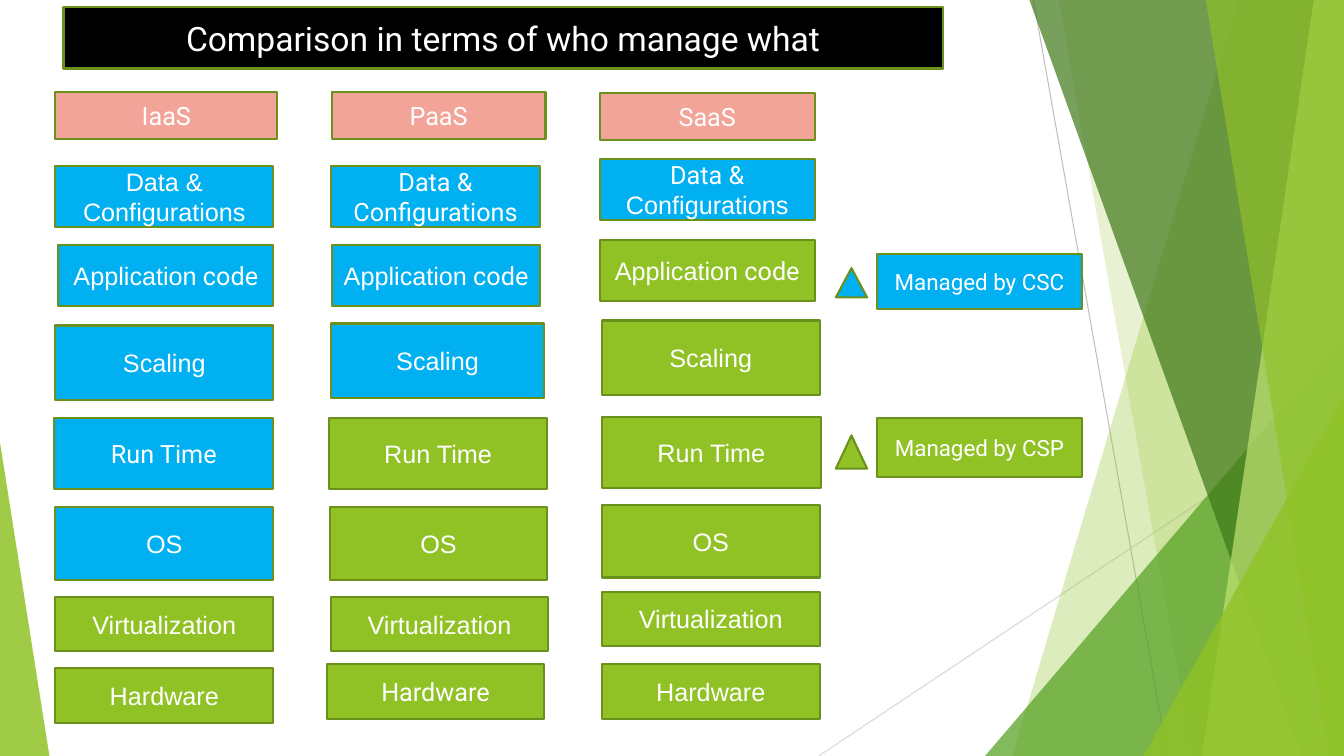
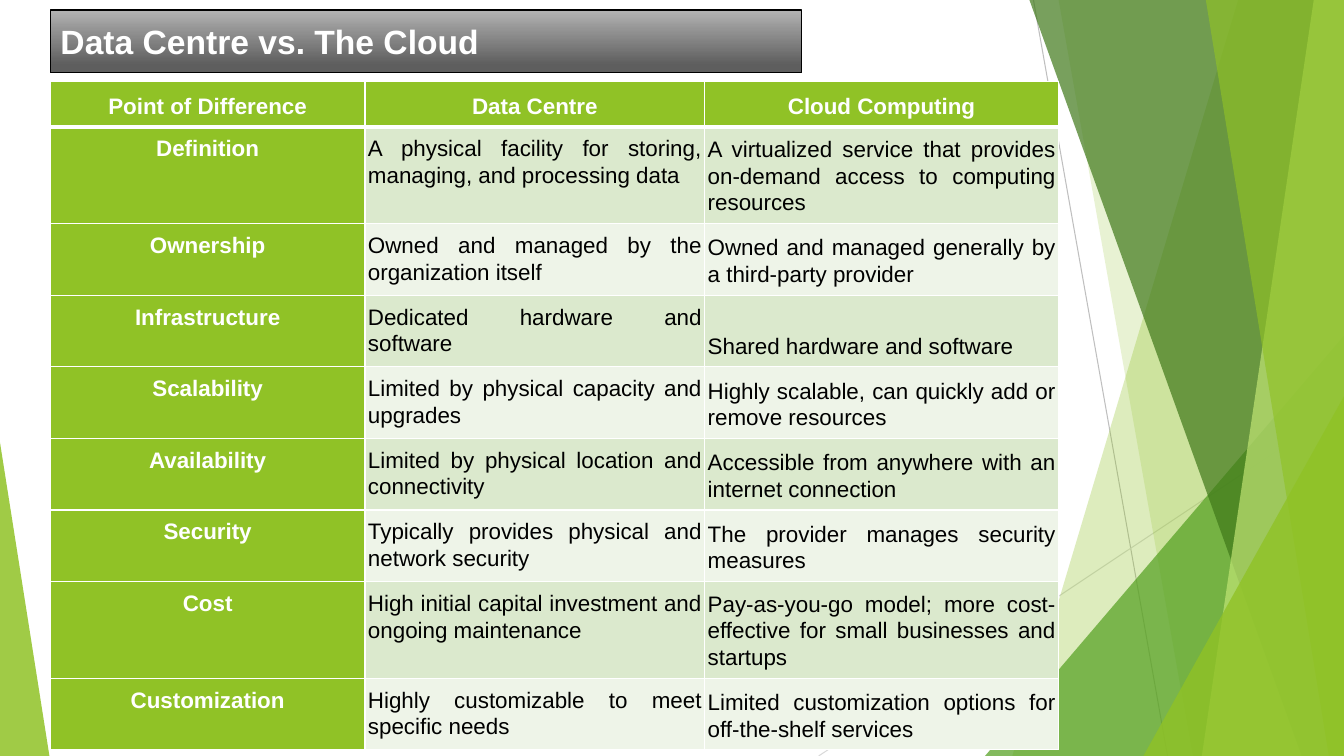
"""Build two slides on cloud service models and data centres."""
from lxml import etree
from pptx import Presentation
from pptx.dml.color import RGBColor
from pptx.enum import shapes, text
from pptx.oxml.ns import qn
from pptx.util import Inches, Pt

COLORS = {
    "white": "FFFFFF", "black": "000000", "green": "90C226", "leaf": "54A021",
    "forest": "3F7819", "lime": "C0E474", "outline": "6B901C", "blue": "00B0F0",
    "pink": "F2A499", "band_dark": "DBE9CD", "band_light": "EEF4E8",
    "gray_top": "B2B2B2", "gray_bottom": "5E5E5E", "line": "BFBFBF", "line_light": "D9D9D9",
}
RGB = {name: RGBColor.from_string(value) for name, value in COLORS.items()}
FONTS = {"A": "Arial", "R": "Roboto"}
WIDTH, HEIGHT = 13.33, 7.5


def write(paragraph, pieces, fonts, size, color="white", bold=False):
    for piece, font in zip(pieces, fonts):
        run = paragraph.add_run()
        run.text = piece
        run.font.name = FONTS[font]
        run.font.size = Pt(size)
        run.font.bold = bold
        run.font.color.rgb = RGB[color]


def add_box(slide, place, color, pieces=(), fonts="", size=18, preset="RECTANGLE"):
    shape = slide.shapes.add_shape(shapes.MSO_SHAPE[preset], *map(Inches, place))
    shape.shadow.inherit = False
    shape.fill.solid()
    shape.fill.fore_color.rgb = RGB[color]
    shape.line.color.rgb = RGB["outline"]
    shape.line.width = Pt(1.5)
    shape.text_frame.word_wrap = True
    paragraph = shape.text_frame.paragraphs[0]
    paragraph.alignment = text.PP_ALIGN.CENTER
    write(paragraph, pieces, fonts, size)


presentation = Presentation()
presentation.slide_width, presentation.slide_height = Inches(WIDTH), Inches(HEIGHT)
layout = presentation.slide_layouts[5]
for placeholder in list(layout.placeholders):
    if placeholder.placeholder_format.idx >= 10:
        layout.shapes.element.remove(placeholder.element)
models_slide = presentation.slides.add_slide(layout)
comparison_slide = presentation.slides.add_slide(layout)

decorations = []
for ends, color in [((10.25, 0, 11.58, HEIGHT), "line"), ((WIDTH, 4.03, 8.12, HEIGHT), "line_light")]:
    connector = models_slide.shapes.add_connector(shapes.MSO_CONNECTOR.STRAIGHT, *map(Inches, ends))
    connector.line.color.rgb = RGB[color]
    connector.line.width = Pt(0.75)
    etree.SubElement(connector.element.spPr, qn("a:effectLst"))
    decorations.append(connector)

facets = [
    ("facet", (12.28, 10.04), "green", 30),
    ("facet", (10.5, 11.83), "green", 20),
    ("triangle", (9.77, 3.33, 3.56, 1), "leaf", 72),
    ("facet", (10.21, 12.91), "forest", 70),
    ("facet", (13.03, 11.92), "lime", 70),
    ("facet", (11.96, 13.18), "green", 65),
    ("triangle", (11.34, 3.93, 1.99, 1), "green", 80),
    ("triangle", (0, 4.39, 0.49, 0), "green", 85),
]
for kind, geometry, color, opacity in facets:
    if kind == "facet":
        top_x, bottom_x = geometry
        builder = models_slide.shapes.build_freeform(Inches(top_x), 0)
        corners = [(WIDTH, 0), (WIDTH, HEIGHT), (bottom_x, HEIGHT)]
        builder.add_line_segments([(Inches(x), Inches(y)) for x, y in corners])
        shape = builder.convert_to_shape()
    else:
        left, top, width, apex = geometry
        shape = models_slide.shapes.add_shape(
            shapes.MSO_SHAPE.ISOSCELES_TRIANGLE, *map(Inches, (left, top, width, HEIGHT - top)))
        shape.adjustments[0] = apex
    shape.shadow.inherit = False
    shape.line.fill.background()
    shape.fill.solid()
    shape.fill.fore_color.rgb = RGB[color]
    fill_color = shape.element.spPr.find(qn("a:solidFill")).find(qn("a:srgbClr"))
    etree.SubElement(fill_color, qn("a:alpha"), val=str(opacity * 1000))
    decorations.append(shape)
for decoration in decorations:
    layout.shapes.element.append(decoration.element)

titles = [
    (models_slide, "Comparison in terms of who manage what", (0.63, 0.07, 8.72, 0.61),
     "R", False, "CENTER", "outline", 1.5),
    (comparison_slide, "Data Centre vs. The Cloud", (0.5, 0.1, 7.45, 0.62),
     "A", True, "LEFT", "black", 1),
]
for slide, wording, place, font, bold, alignment, line_color, line_width in titles:
    title = slide.shapes.title
    title.left, title.top, title.width, title.height = map(Inches, place)
    title.line.color.rgb = RGB[line_color]
    title.line.width = Pt(line_width)
    title.text_frame.vertical_anchor = text.MSO_ANCHOR.MIDDLE
    paragraph = title.text_frame.paragraphs[0]
    paragraph.alignment = text.PP_ALIGN[alignment]
    write(paragraph, [wording], font, 24, bold=bold)
models_slide.shapes.title.fill.solid()
models_slide.shapes.title.fill.fore_color.rgb = RGB["black"]
title_fill = comparison_slide.shapes.title.fill
title_fill.gradient()
title_fill.gradient_angle = 270
for stop, color, position in zip(title_fill.gradient_stops, ("gray_top", "gray_bottom"), (0, 0.88)):
    stop.color.rgb = RGB[color]
    stop.position = position

models = [
    ("IaaS", (0.55, 0.91, 2.2, 0.47), 5),
    ("PaaS", (3.29, 0.91, 2.12, 0.47), 3),
    ("SaaS", (5.95, 0.92, 2.13, 0.47), 1),
]
layers = [
    (["Data & ", "Configurations"], 0.6,
     [(0.55, 1.65, 2.16, "AA"), (3.28, 1.65, 2.08, "RR"), (5.95, 1.58, 2.13, "RA")]),
    (["Application", " code"], 0.61,
     [(0.58, 2.43, 2.13, "AR"), (3.29, 2.43, 2.07, "AR"), (5.95, 2.38, 2.13, "AR")]),
    (["Scaling"], 0.74,
     [(0.55, 3.23, 2.16, "A"), (3.28, 3.21, 2.12, "A"), (5.97, 3.18, 2.16, "A")]),
    (["Run Time"], 0.7,
     [(0.54, 4.15, 2.17, "R"), (3.26, 4.15, 2.17, "A"), (5.97, 4.14, 2.17, "A")]),
    (["OS"], 0.72,
     [(0.55, 5.03, 2.16, "A"), (3.27, 5.03, 2.16, "A"), (5.97, 5.01, 2.16, "A")]),
    (["Virtualization"], 0.54,
     [(0.55, 5.92, 2.16, "A"), (3.28, 5.92, 2.16, "A"), (5.97, 5.87, 2.16, "A")]),
    (["Hardware"], 0.54,
     [(0.55, 6.63, 2.16, "A"), (3.24, 6.59, 2.16, "R"), (5.97, 6.59, 2.16, "A")]),
]
for column, (model, place, customer_layers) in enumerate(models):
    add_box(models_slide, place, "pink", [model], "R")
    for index, (pieces, height, cells) in enumerate(layers):
        left, top, width, fonts = cells[column]
        color = "blue" if index < customer_layers else "green"
        add_box(models_slide, (left, top, width, height), color, pieces, fonts)

legend = [
    ("Managed by CSC", "blue", (8.29, 2.66, 0.31, 0.29), (8.7, 2.52, 2.03, 0.55)),
    ("Managed by CSP", "green", (8.29, 4.32, 0.31, 0.33), (8.7, 4.15, 2.03, 0.58)),
]
for label, color, marker_place, label_place in legend:
    add_box(models_slide, marker_place, color, preset="ISOSCELES_TRIANGLE")
    add_box(models_slide, label_place, color, [label], "R", 16)

rows = [
    ("Point of Difference", "Data Centre", "Cloud Computing"),
    ("Definition", "A physical facility for storing, managing, and processing data",
     "A virtualized service that provides on-demand access to computing resources"),
    ("Ownership", "Owned and managed by the organization itself",
     "Owned and managed generally by a third-party provider"),
    ("Infrastructure", "Dedicated hardware and software", "Shared hardware and software"),
    ("Scalability", "Limited by physical capacity and upgrades",
     "Highly scalable, can quickly add or remove resources"),
    ("Availability", "Limited by physical location and connectivity",
     "Accessible from anywhere with an internet connection"),
    ("Security", "Typically provides physical and network security",
     "The provider manages security measures"),
    ("Cost", "High initial capital investment and ongoing maintenance",
     "Pay-as-you-go model; more cost-effective for small businesses and startups"),
    ("Customization", "Highly customizable to meet specific needs",
     "Limited customization options for off-the-shelf services"),
]
column_widths = [3.12, 3.37, 3.51]
row_heights = [0.45, 0.96, 0.71, 0.71, 0.71, 0.71, 0.71, 0.96, 0.71]
table = comparison_slide.shapes.add_table(
    len(rows), len(column_widths), Inches(0.5), Inches(0.81),
    Inches(sum(column_widths)), Inches(sum(row_heights))).table
table.first_col = True
for column, width in zip(table.columns, column_widths):
    column.width = Inches(width)
for row_index, (wordings, height) in enumerate(zip(rows, row_heights)):
    table.rows[row_index].height = Inches(height)
    band = "band_dark" if row_index % 2 else "band_light"
    for column_index, wording in enumerate(wordings):
        heading = row_index == 0 or column_index == 0
        at_bottom = row_index == 0 or column_index == 2
        cell = table.cell(row_index, column_index)
        cell.fill.solid()
        cell.fill.fore_color.rgb = RGB["green" if heading else band]
        cell.margin_left = cell.margin_right = Inches(0.03)
        cell.margin_top = cell.margin_bottom = Inches(0.08)
        cell.vertical_anchor = text.MSO_ANCHOR.BOTTOM if at_bottom else text.MSO_ANCHOR.TOP
        paragraph = cell.text_frame.paragraphs[0]
        paragraph.alignment = text.PP_ALIGN.CENTER if heading else text.PP_ALIGN.JUSTIFY
        paragraph.line_spacing = 1.07
        paragraph.space_after = Pt(8 if row_index == 0 or column_index else 0)
        write(paragraph, [wording], "A", 16, "white" if heading else "black", heading)
        if row_index == 0:
            border = etree.Element(qn("a:lnB"), w=str(Pt(3)))
            border_fill = etree.SubElement(border, qn("a:solidFill"))
            etree.SubElement(border_fill, qn("a:srgbClr"), val=COLORS["white"])
            cell.fill.fore_color.rgb = RGB["green"]
            table.rows[0].cells[column_index].text_frame.word_wrap = True
            paragraph_cell = table.rows[0].cells[column_index]
            paragraph_cell.vertical_anchor = text.MSO_ANCHOR.BOTTOM
            header_row = comparison_slide.shapes.element.find(".//" + qn("a:tr"))
            header_row.findall(qn("a:tc"))[column_index].find(qn("a:tcPr")).insert(0, border)

presentation.save("out.pptx")
